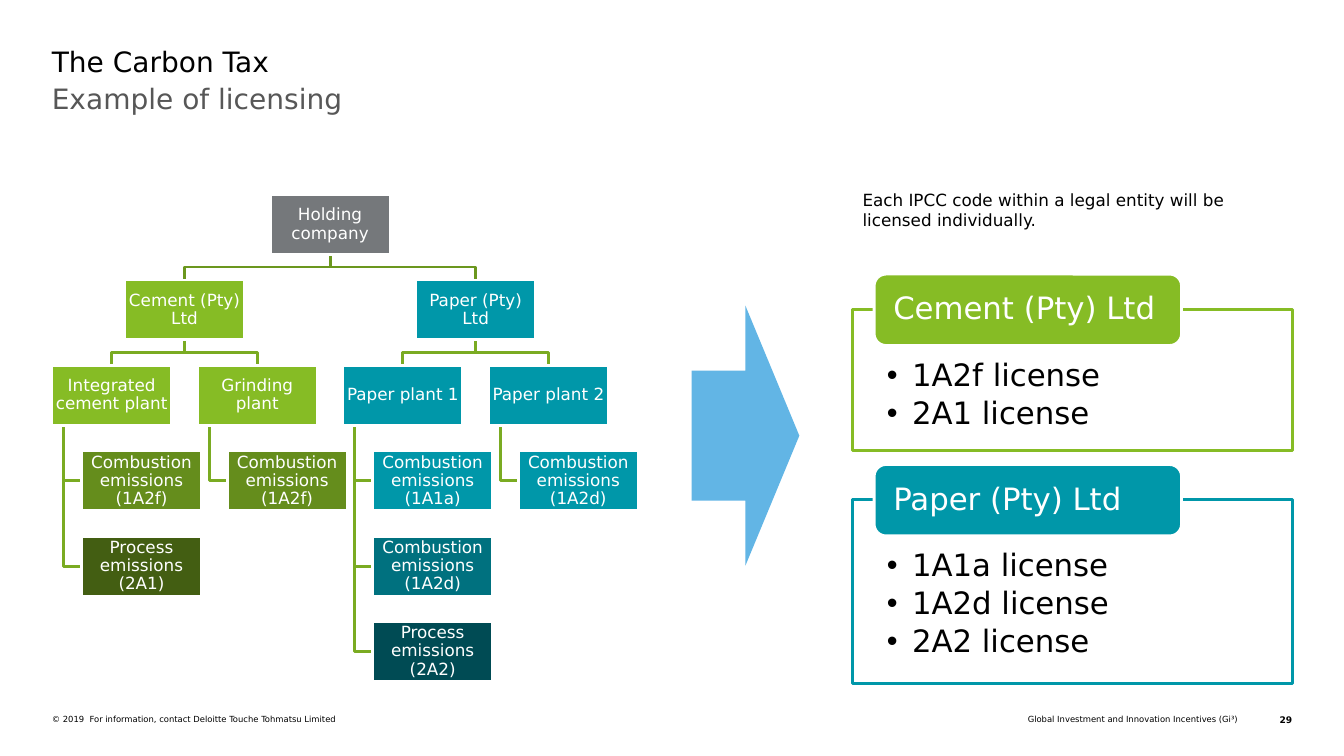
from dataclasses import dataclass

from lxml.etree import SubElement
from pptx import Presentation
from pptx.dml.color import RGBColor
from pptx.enum.shapes import MSO_SHAPE as SHAPE
from pptx.enum.text import MSO_ANCHOR as ANCHOR, MSO_AUTO_SIZE as AUTOSIZE, PP_ALIGN as ALIGN
from pptx.oxml.ns import qn
from pptx.util import Pt


@dataclass(frozen=True)
class Theme:
    font: str = "DejaVu Sans"
    black: str = "000000"
    white: str = "FFFFFF"
    subtitle: str = "575757"
    holding: str = "75787B"
    cement: str = "86BC25"
    cement_dark: str = "658D1C"
    cement_darkest: str = "435E12"
    paper: str = "0097A9"
    paper_dark: str = "00717F"
    paper_darkest: str = "004B54"
    top_link: str = "6B971E"
    link: str = "7AAB22"
    arrow: str = "62B5E5"
    heading_size: float = 20
    panel_size: float = 22
    body_size: float = 12
    footer_size: float = 6
    number_size: float = 6.5
    stroke: float = 2


class SlideBuilder:
    """Draws styled elements on one slide; all lengths are in points."""

    def __init__(self, slide, theme):
        self.slide, self.shapes, self.theme = slide, slide.shapes, theme

    def set_text(self, shape, lines, size, color, insets=(0, 0, 0, 0), anchor=ANCHOR.TOP,
                 align=ALIGN.LEFT, spacing=1.0, after=0, bullet_indent=0, bold=False):
        frame = shape.text_frame
        sides = ("margin_left", "margin_top", "margin_right", "margin_bottom")
        frame_format = {"word_wrap": True, "auto_size": AUTOSIZE.NONE, "vertical_anchor": anchor,
                        **{side: Pt(inset) for side, inset in zip(sides, insets)}}
        for name, value in frame_format.items():
            setattr(frame, name, value)
        paragraph_format = {"alignment": align, "line_spacing": spacing,
                            "space_before": Pt(0), "space_after": Pt(after)}
        font_format = {"name": self.theme.font, "size": Pt(size), "bold": bold}
        for index, line in enumerate(lines):
            paragraph = frame.add_paragraph() if index else frame.paragraphs[0]
            if bullet_indent:
                properties = paragraph._p.get_or_add_pPr()
                properties.set("marL", str(Pt(bullet_indent)))
                properties.set("indent", str(Pt(-bullet_indent)))
                SubElement(properties, qn("a:buChar")).set("char", "•")
            for name, value in paragraph_format.items():
                setattr(paragraph, name, value)
            run = paragraph.add_run()
            run.text = line
            for name, value in font_format.items():
                setattr(run.font, name, value)
            run.font.color.rgb = RGBColor.from_string(color)

    def paint(self, shape, fill, line=None):
        shape.fill.solid()
        shape.fill.fore_color.rgb = RGBColor.from_string(fill)
        if line:
            self.stroke(shape, line)
        else:
            shape.line.fill.background()

    def stroke(self, shape, color):
        shape.line.color.rgb = RGBColor.from_string(color)
        shape.line.width = Pt(self.theme.stroke)

    def placeholder(self, index, box, lines, size, color, **text_format):
        holder = self.slide.placeholders[index]
        for name, value in zip(("left", "top", "width", "height"), box):
            setattr(holder, name, Pt(value))
        self.set_text(holder, lines, size, color, **text_format)
        return holder

    def text(self, box, line, size, **text_format):
        textbox = self.shapes.add_textbox(*map(Pt, box))
        self.set_text(textbox, [line], size, self.theme.black, **text_format)

    def block(self, kind, box, fill, line=None):
        shape = self.shapes.add_shape(kind, *map(Pt, box))
        shape.shadow.inherit = False
        self.paint(shape, fill, line)
        return shape

    def node(self, box, label, fill):
        shape = self.block(SHAPE.RECTANGLE, box, fill, self.theme.white)
        self.set_text(shape, [label], self.theme.body_size, self.theme.white, insets=(0.6,) * 4,
                      anchor=ANCHOR.MIDDLE, align=ALIGN.CENTER, spacing=0.9)

    def link(self, points, color):
        start, *rest = [(Pt(x), Pt(y)) for x, y in points]
        builder = self.shapes.build_freeform(*start)
        builder.add_line_segments(rest, close=False)
        shape = builder.convert_to_shape()
        shape.shadow.inherit = False
        shape.fill.background()
        self.stroke(shape, color)

    def license_panel(self, index, top, height, company, licenses, color):
        theme = self.theme
        panel = self.placeholder(index, (609, top, 314, height), licenses, theme.panel_size,
                                 theme.black, insets=(24.5, 36, 24.5, 12), spacing=0.9,
                                 after=3.3, bullet_indent=18)
        self.paint(panel, theme.white, color)
        fill_color = panel.element.spPr.find(qn("a:solidFill"))[0]
        SubElement(fill_color, qn("a:alpha")).set("val", "90000")
        tab = self.block(SHAPE.ROUNDED_RECTANGLE, (624.4, top - 25.2, 219.6, 51), color, theme.white)
        self.set_text(tab, [company], theme.panel_size, theme.white, insets=(11.2, 0, 11.2, 0),
                      anchor=ANCHOR.MIDDLE, spacing=0.9)


# Organisation chart grid
LEFT, TOP = 37, 139
COLUMN_STEP, ROW_STEP = 104, 61
NODE_WIDTH, NODE_HEIGHT = 85.6, 42.8
SOURCE_INDENT, STEM_INDENT, DROP = 21.3, 8.5, 9


def cell(column, row, indent=0):
    return (LEFT + column * COLUMN_STEP + indent, TOP + row * ROW_STEP, NODE_WIDTH, NODE_HEIGHT)


def branch(parent, child):
    parent_x, child_x = (box[0] + NODE_WIDTH / 2 for box in (parent, child))
    bottom = parent[1] + NODE_HEIGHT
    return [(parent_x, bottom), (parent_x, bottom + DROP), (child_x, bottom + DROP), (child_x, child[1])]


def hanger(plant, source):
    stem, middle = plant[0] + STEM_INDENT, source[1] + NODE_HEIGHT / 2
    return [(stem, plant[1] + NODE_HEIGHT), (stem, middle), (source[0], middle)]


def main():
    theme = Theme()
    # company, colour, plants with their emission sources
    companies = [
        ("Cement (Pty) Ltd", theme.cement, [
            ("Integrated cement plant", [("Combustion emissions (1A2f)", theme.cement_dark),
                                         ("Process emissions (2A1)", theme.cement_darkest)]),
            ("Grinding plant", [("Combustion emissions (1A2f)", theme.cement_dark)])]),
        ("Paper (Pty) Ltd", theme.paper, [
            ("Paper plant 1", [("Combustion emissions (1A1a)", theme.paper),
                               ("Combustion emissions (1A2d)", theme.paper_dark),
                               ("Process emissions (2A2)", theme.paper_darkest)]),
            ("Paper plant 2", [("Combustion emissions (1A2d)", theme.paper)])]),
    ]
    # placeholder, top, height, licenses of each company
    panels = [(2, 221, 101, ["1A2f license", "2A1 license"]),
              (4, 357, 131, ["1A1a license", "1A2d license", "2A2 license"])]

    deck = Presentation()
    deck.slide_width, deck.slide_height = Pt(960), Pt(540)
    slide = deck.slides.add_slide(deck.slide_layouts.get_by_name("Comparison"))
    builder = SlideBuilder(slide, theme)

    # Title and subtitle
    builder.placeholder(0, (37, 32, 886, 26.5), ["The Carbon Tax"], theme.heading_size, theme.black)
    builder.placeholder(1, (37, 58.5, 886, 60), ["Example of licensing"], theme.heading_size,
                        theme.subtitle)
    unused = slide.placeholders[3].element
    unused.getparent().remove(unused)

    # Organisation chart: links go behind the nodes they join
    holding_box = cell(1.5, 0)
    for company_index, (company, color, plants) in enumerate(companies):
        first_column = 2 * company_index
        company_box = cell(first_column + 0.5, 1)
        builder.link(branch(holding_box, company_box), theme.top_link)
        for column, (plant, sources) in enumerate(plants, first_column):
            plant_box = cell(column, 2)
            builder.link(branch(company_box, plant_box), theme.link)
            for row, (source, source_color) in enumerate(sources, 3):
                source_box = cell(column, row, SOURCE_INDENT)
                builder.link(hanger(plant_box, source_box), theme.link)
                builder.node(source_box, source, source_color)
            builder.node(plant_box, plant, color)
        builder.node(company_box, company, color)
    builder.node(holding_box, "Holding company", theme.holding)

    # Arrow to the licenses
    builder.block(SHAPE.RIGHT_ARROW, (494, 218.4, 77, 185.6), theme.arrow)

    # Licenses per legal entity
    builder.text((609, 132, 314, 36),
                 "Each IPCC code within a legal entity will be licensed individually.",
                 theme.body_size, insets=(7.2, 3.6, 7.2, 3.6))
    for (company, color, _), (index, top, height, licenses) in zip(companies, panels):
        builder.license_panel(index, top, height, company, licenses, color)

    # Footer
    builder.text((37, 510, 422, 7.2), "© 2019  For information, contact Deloitte Touche Tohmatsu Limited",
                 theme.footer_size)
    builder.text((499, 510, 385, 7.2), "Global Investment and Innovation Incentives (Gi³)",
                 theme.footer_size, align=ALIGN.RIGHT)
    builder.text((898.5, 510, 24.5, 8), "29", theme.number_size, align=ALIGN.RIGHT, bold=True)

    deck.save("out.pptx")


if __name__ == "__main__":
    main()
